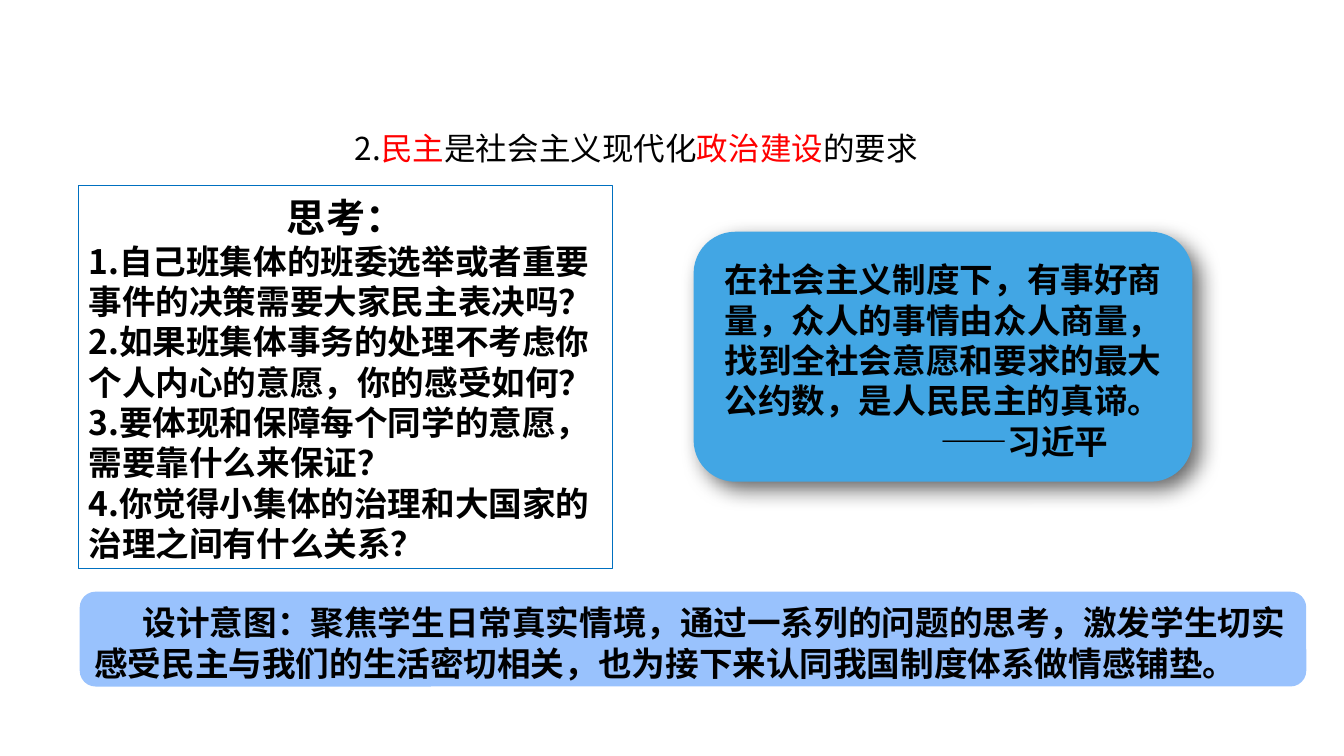
from lxml import etree
from pptx import Presentation
from pptx.dml.color import RGBColor
from pptx.enum.shapes import MSO_SHAPE
from pptx.enum.text import MSO_ANCHOR, PP_ALIGN
from pptx.oxml import parse_xml
from pptx.oxml.ns import qn
from pptx.util import Cm, Pt

RECT, ROUND = MSO_SHAPE.RECTANGLE, MSO_SHAPE.ROUNDED_RECTANGLE
TOP, MIDDLE = MSO_ANCHOR.TOP, MSO_ANCHOR.MIDDLE
LEFT, CENTER = PP_ALIGN.LEFT, PP_ALIGN.CENTER
FONT = "Noto Sans CJK SC"
BLACK, RED = "000000", "FF0000"
LINE_PITCH = 1.2

TITLE = [("2.", BLACK), ("民主", RED), ("是社会主义现代化", BLACK),
         ("政治建设", RED), ("的要求", BLACK)]
THINK = "思考："
QUESTIONS = [
    "1.自己班集体的班委选举或者重要事件的决策需要大家民主表决吗？",
    "2.如果班集体事务的处理不考虑你个人内心的意愿，你的感受如何？",
    "3.要体现和保障每个同学的意愿，需要靠什么来保证？",
    "4.你觉得小集体的治理和大国家的治理之间有什么关系？",
]
QUOTE = "在社会主义制度下，有事好商量，众人的事情由众人商量，找到全社会意愿和要求的最大公约数，是人民民主的真谛。"
SPEAKER = "——习近平"
INTENT = ("设计意图：聚焦学生日常真实情境，通过一系列的问题的思考，激发学生切实感受民主与我们的生活密切相关，"
          "也为接下来认同我国制度体系做情感铺垫。")

TITLE_BOX = (7.09, 3.05, 17.9, 1.22)
THINK_BOX = (1.98, 4.67, 13.46, 9.65)
QUOTE_BOX = (17.48, 5.84, 12.57, 6.3)
INTENT_BOX = (2.01, 14.91, 30.91, 2.39)

SHADOW = (
    '<a:effectLst xmlns:a="http://schemas.openxmlformats.org/drawingml/2006/main">'
    '<a:outerShdw blurRad="{blur}" dist="{dist}" dir="2700000" algn="tl" rotWithShape="0">'
    '<a:srgbClr val="000000"><a:alpha val="60000"/></a:srgbClr>'
    '</a:outerShdw></a:effectLst>')


def rgb(color):
    return RGBColor.from_string(color)


def set_frame(sp, anchor):
    tf = sp.text_frame
    tf.word_wrap = True
    tf.vertical_anchor = anchor
    tf.margin_top, tf.margin_bottom = Cm(0.21), Cm(0.04)
    return tf


def add_panel(s, kind, box, fill=None, line=None, anchor=MIDDLE):
    sp = s.shapes.add_shape(kind, *map(Cm, box))
    sp.shadow.inherit = False
    if fill:
        sp.fill.solid()
        sp.fill.fore_color.rgb = rgb(fill)
    else:
        sp.fill.background()
    if line:
        sp.line.color.rgb = rgb(line)
        sp.line.width = Pt(0.75)
    else:
        sp.line.fill.background()
    return sp, set_frame(sp, anchor)


def add_text(tf, text, size=24, bold=True, align=LEFT, margin=0, indent=0):
    """Add a paragraph from a string or from (text, colour) pairs."""
    p = tf.paragraphs[0] if not tf.text else tf.add_paragraph()
    p.alignment = align
    p.line_spacing = Pt(size * LINE_PITCH)
    pPr = p._p.get_or_add_pPr()
    pPr.set("marL", str(Cm(margin)))
    pPr.set("indent", str(Cm(indent)))
    for words, color in [(text, BLACK)] if isinstance(text, str) else text:
        r = p.add_run()
        r.text = words
        r.font.name, r.font.size, r.font.bold = FONT, Pt(size), bold
        r.font.color.rgb = rgb(color)
        etree.SubElement(r.font._element, qn("a:ea")).set("typeface", FONT)


def main():
    prs = Presentation()
    prs.slide_width, prs.slide_height = Cm(33.87), Cm(19.05)
    s = prs.slides.add_slide(prs.slide_layouts[6])

    _, tf = add_panel(s, ROUND, INTENT_BOX, fill="99C2FD")
    add_text(tf, INTENT, indent=1.22)

    tf = set_frame(s.shapes.add_textbox(*map(Cm, TITLE_BOX)), TOP)
    add_text(tf, TITLE, size=22.5, bold=False, align=CENTER)

    _, tf = add_panel(s, RECT, THINK_BOX, line="0070C0", anchor=TOP)
    add_text(tf, THINK, size=28, align=CENTER)
    for question in QUESTIONS:
        add_text(tf, question)

    sp, tf = add_panel(s, ROUND, QUOTE_BOX, fill="42A6E4")
    spPr = sp._element.spPr
    spPr.replace(spPr.find(qn("a:effectLst")),
                 parse_xml(SHADOW.format(blur=Pt(16), dist=Pt(8))))
    add_text(tf, QUOTE, align=CENTER)
    add_text(tf, SPEAKER, align=CENTER, margin=4.1)

    prs.save("out.pptx")


if __name__ == "__main__":
    main()
